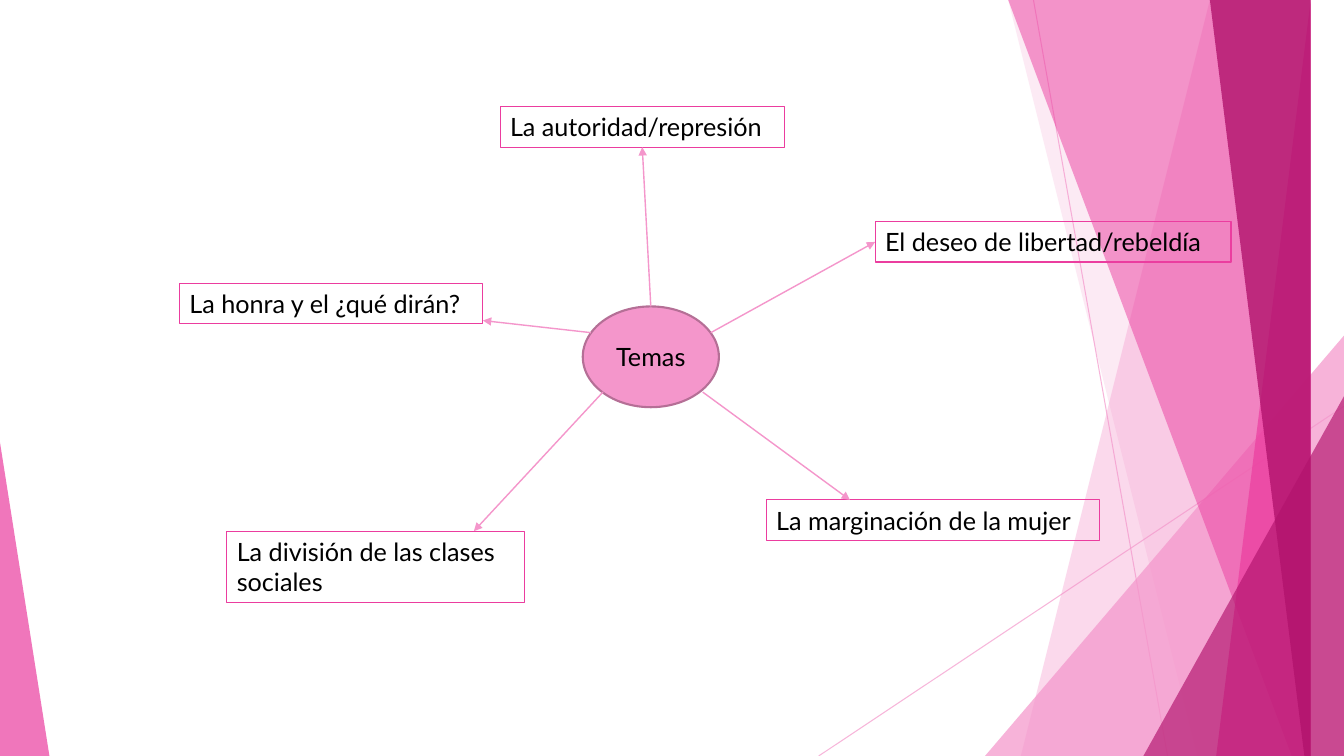
from lxml import etree
from pptx import Presentation
from pptx import util as u
from pptx.dml.color import RGBColor
from pptx.enum import shapes, text
from pptx.oxml.ns import qn

COLORS = {"light": "F496CB", "pink": "EB3D9F", "dark": "B2136D",
          "rim": "B56F96", "text": "000000"}
FONT = "Lato"
WIDTH, HEIGHT = 13.33, 7.5
TOP = -0.01  # the facets start just above the slide

# x of the top and bottom corners on the slanted side, colour, opacity
BACK_FACETS = [(12.28, 10.04, "light", 36), (10.5, 11.83, "light", 20)]
FRONT_FACETS = [(10.21, 12.91, "pink", 50), (13.03, 11.92, "pink", 70),
                (11.96, 13.18, "dark", 80)]

# Theme, box (left, top, width, height), arrow start and end,
# side of the box that the arrow joins in its middle
THEMES = [
    ("La autoridad/represión", (4.96, 1.06, 2.82, 0.4), (6.45, 3.04), (6.38, 1.47), 2),
    ("El deseo de libertad/rebeldía", (8.68, 2.2, 3.53, 0.4), (7.05, 3.3), (8.68, 2.4), 1),
    ("La honra y el ¿qué dirán?", (1.78, 2.81, 3.01, 0.4), (5.86, 3.3), (4.79, 3.18), None),
    ("La marginación de la mujer", (7.6, 4.96, 3.31, 0.4), (6.97, 3.89), (8.43, 4.96), None),
    ("La división de las clases sociales", (2.25, 5.27, 2.95, 0.71), (5.98, 3.89), (4.7, 5.27), None),
]


def inches(values):
    return [u.Inches(value) for value in values]


def rgb(name):
    return RGBColor.from_string(COLORS[name])


def set_opacity(fill_format, percent):
    color = fill_format._xPr.find(qn("a:solidFill"))[0]
    etree.SubElement(color, qn("a:alpha")).set("val", str(percent * 1000))


def paint_facet(shape, color, opacity):
    shape.shadow.inherit = False
    shape.fill.solid()
    shape.fill.fore_color.rgb = rgb(color)
    set_opacity(shape.fill, opacity)
    shape.line.fill.background()


def add_line(slide, start, end, weight):
    line = slide.shapes.add_connector(shapes.MSO_CONNECTOR.STRAIGHT,
                                      *inches(start + end))
    line.line.color.rgb = rgb("light")
    line.line.width = u.Pt(weight)
    etree.SubElement(line._element.spPr, qn("a:effectLst"))
    return line


def add_facet(slide, top_x, bottom_x, color, opacity):
    builder = slide.shapes.build_freeform(top_x, TOP, scale=u.Inches(1))
    builder.add_line_segments([(WIDTH, TOP), (WIDTH, HEIGHT), (bottom_x, HEIGHT)])
    paint_facet(builder.convert_to_shape(), color, opacity)


def add_corner(slide, box, apex, color, opacity):
    triangle = slide.shapes.add_shape(shapes.MSO_SHAPE.ISOSCELES_TRIANGLE, *inches(box))
    triangle.adjustments[0] = apex
    paint_facet(triangle, color, opacity)


def add_backdrop(slide, width, height):
    # Thin crossing lines
    for start, end in [((10.25, 0), (11.58, height)), ((width, 4.03), (8.12, height))]:
        line = add_line(slide, start, end, 0.75)
        set_opacity(line.line.fill, 70)

    # Overlapping facets and corner triangles
    for facet in BACK_FACETS:
        add_facet(slide, *facet)
    add_corner(slide, (9.77, 3.33, 3.56, 4.17), 1, "light", 72)
    for facet in FRONT_FACETS:
        add_facet(slide, *facet)
    add_corner(slide, (11.34, 3.93, 1.99, 3.57), 1, "dark", 66)
    add_corner(slide, (0, 4.39, 0.49, 3.11), 0, "pink", 70)


def write(shape, words, alignment):
    shape.text_frame.word_wrap = True
    paragraph = shape.text_frame.paragraphs[0]
    paragraph.text = words
    paragraph.alignment = alignment
    paragraph.font.name = FONT
    paragraph.font.size = u.Pt(18)
    paragraph.font.color.rgb = rgb("text")


def add_hub(slide, box):
    hub = slide.shapes.add_shape(shapes.MSO_SHAPE.OVAL, *inches(box))
    hub.shadow.inherit = False
    hub.fill.solid()
    hub.fill.fore_color.rgb = rgb("light")
    hub.line.color.rgb = rgb("rim")
    hub.line.width = u.Pt(1.5)
    hub.text_frame.vertical_anchor = text.MSO_ANCHOR.MIDDLE
    write(hub, "Temas", text.PP_ALIGN.CENTER)
    return hub


def add_theme(slide, words, box):
    theme = slide.shapes.add_textbox(*inches(box))
    theme.line.color.rgb = rgb("pink")
    theme.line.width = u.Pt(0.75)
    write(theme, words, text.PP_ALIGN.LEFT)
    theme.text_frame.auto_size = text.MSO_AUTO_SIZE.SHAPE_TO_FIT_TEXT
    return theme


def add_theme_map(slide, hub_box):
    hub = add_hub(slide, hub_box)
    hub_top = (round(hub_box[0] + hub_box[2] / 2, 2), hub_box[1])
    boxes = [add_theme(slide, words, box) for words, box, *_ in THEMES]

    # Arrows from the hub to each theme
    for theme, (_, _, start, end, side) in zip(boxes, THEMES):
        arrow = add_line(slide, start, end, 1)
        tail = etree.SubElement(arrow.line._get_or_add_ln(), qn("a:tailEnd"))
        tail.set("type", "triangle")
        if abs(start[0] - hub_top[0]) < 0.02 and start[1] == hub_top[1]:
            arrow.begin_connect(hub, 0)
        if side is not None:
            arrow.end_connect(theme, side)


def main():
    presentation = Presentation()
    presentation.slide_width, presentation.slide_height = inches((WIDTH, HEIGHT))
    slide = presentation.slides.add_slide(presentation.slide_layouts[6])
    add_backdrop(slide, WIDTH, HEIGHT)
    add_theme_map(slide, (5.78, 3.04, 1.35, 1))
    presentation.save("out.pptx")


if __name__ == "__main__":
    main()
